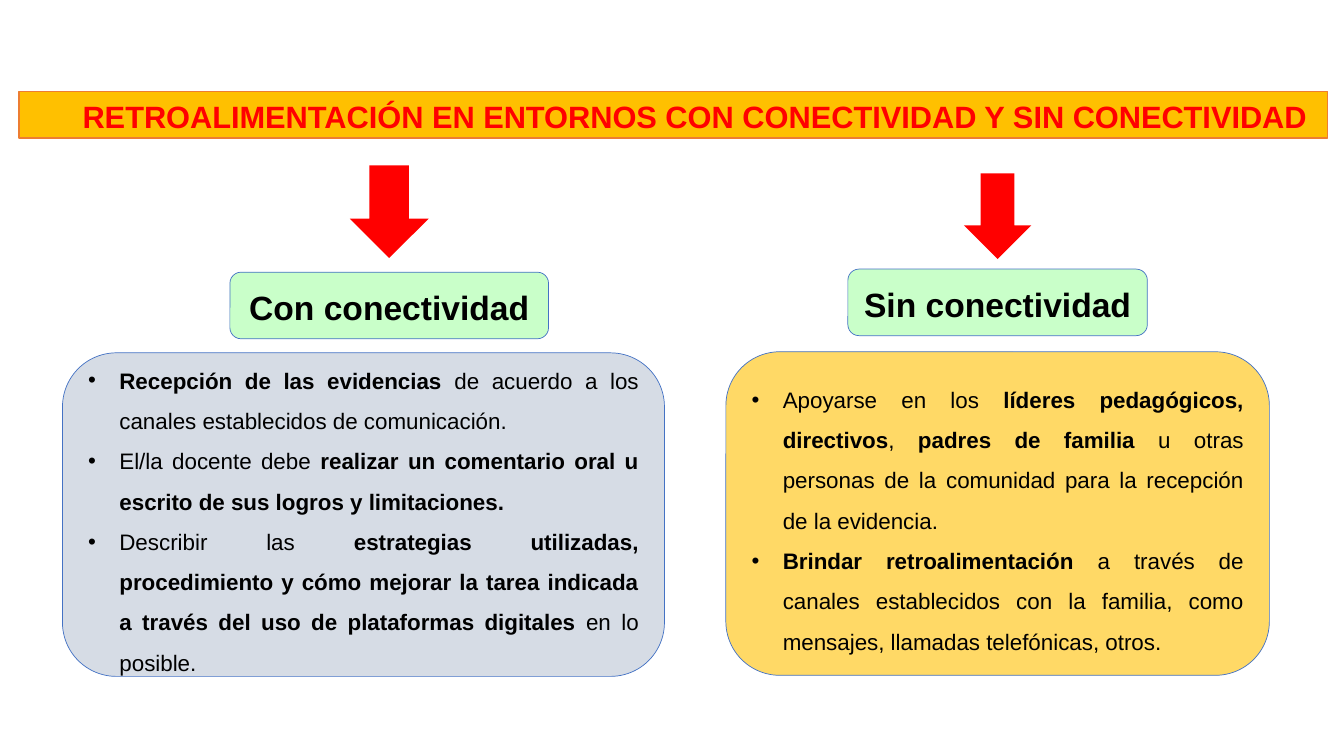
from dataclasses import dataclass

from lxml.etree import SubElement
from pptx import Presentation
from pptx.dml.color import RGBColor as Rgb
from pptx.enum.shapes import MSO_SHAPE as Preset
from pptx.enum.text import MSO_ANCHOR as Anchor, PP_ALIGN as Align
from pptx.oxml.ns import qn
from pptx.util import Inches, Pt


@dataclass(frozen=True)
class Theme:
    font: str = "Arial"
    ink: str = "000000"
    red: str = "FF0000"
    banner: str = "FFC000"
    banner_line: str = "ED7D31"
    outline: str = "4472C4"
    heading: str = "C9FFC9"
    online: str = "D6DCE5"
    offline: str = "FFD966"
    title_size: int = 22
    heading_size: int = 24
    body_size: int = 16


THEME = Theme()


@dataclass(frozen=True)
class Box:
    left: float
    top: float
    width: float
    height: float

    def area(self, left, top, width, height):
        return Box(
            self.left + self.width * left / 100,
            self.top + self.height * top / 100,
            self.width * width / 100,
            self.height * height / 100,
        )


SLIDE = Box(0, 0, 13.33, 7.5)


def add_block(slide, preset, box, fill, line=None, line_width=0.5):
    block = slide.shapes.add_shape(
        preset, Inches(box.left), Inches(box.top), Inches(box.width), Inches(box.height)
    )
    block.shadow.inherit = False
    block.fill.solid()
    block.fill.fore_color.rgb = Rgb.from_string(fill)
    if line:
        block.line.color.rgb = Rgb.from_string(line)
        block.line.width = Pt(line_width)
    else:
        block.line.fill.background()
    return block


def write(block, paragraphs, size, color=THEME.ink, align=Align.LEFT,
          anchor=Anchor.MIDDLE, margin=0.01, indent=-0.01, spacing=1.07,
          after=0.2, bullet=None):
    frame = block.text_frame
    frame.word_wrap = True
    frame.vertical_anchor = anchor
    for index, content in enumerate(paragraphs):
        paragraph = frame.add_paragraph() if index else frame.paragraphs[0]
        paragraph.alignment = align
        paragraph.line_spacing = spacing
        paragraph.space_after = Pt(after)
        properties = paragraph._p.get_or_add_pPr()
        properties.set("marL", str(Inches(margin)))
        properties.set("indent", str(Inches(indent)))
        if bullet:
            SubElement(properties, qn("a:buFont")).set("typeface", THEME.font)
            SubElement(properties, qn("a:buChar")).set("char", bullet)
        for position, words in enumerate(content.split("**")):
            if words:
                run = paragraph.add_run()
                run.text = words
                run.font.name = THEME.font
                run.font.size = Pt(size)
                run.font.bold = position % 2 == 1
                run.font.color.rgb = Rgb.from_string(color)


def add_banner(slide, box, title):
    banner = add_block(slide, Preset.RECTANGLE, box, THEME.banner, THEME.banner_line, 1)
    write(banner, [f"**{title}**"], THEME.title_size, color=THEME.red,
          anchor=Anchor.TOP, margin=0.54, spacing=1.03)


def add_column(slide, box, heading, points, fill, arrow_area, heading_area):
    add_block(slide, Preset.DOWN_ARROW, box.area(*arrow_area), THEME.red)
    label = add_block(slide, Preset.ROUNDED_RECTANGLE, box.area(*heading_area),
                      THEME.heading, THEME.outline)
    write(label, [f"**{heading}**"], THEME.heading_size, align=Align.CENTER)
    panel = add_block(slide, Preset.ROUNDED_RECTANGLE, box.area(0, 36.69, 100, 63.31),
                      fill, THEME.outline)
    write(panel, points, THEME.body_size, align=Align.JUSTIFY, margin=0.31,
          indent=-0.31, spacing=1.5, after=0, bullet="•")


def main():
    deck = Presentation()
    deck.slide_width = Inches(SLIDE.width)
    deck.slide_height = Inches(SLIDE.height)
    slide = deck.slides.add_slide(deck.slide_layouts[6])

    add_banner(slide, SLIDE.area(1.43, 12.13, 97.37, 6.13),
               "RETROALIMENTACIÓN EN ENTORNOS CON CONECTIVIDAD Y SIN CONECTIVIDAD")
    add_column(
        slide, SLIDE.area(4.65, 21.87, 44.79, 67.6), "Con conectividad",
        [
            "**Recepción de las evidencias **de acuerdo a los canales establecidos "
            "de comunicación.",
            "El/la docente debe **realizar un comentario oral u escrito de sus "
            "logros y limitaciones. **",
            "Describir las **estrategias utilizadas, procedimiento y cómo mejorar "
            "la tarea indicada a través del uso de plataformas digitales** en lo posible.",
        ],
        THEME.online,
        arrow_area=(47.74, 0, 13.07, 18.15),
        heading_area=(27.81, 20.91, 52.93, 13.02),
    )
    add_column(
        slide, SLIDE.area(54.01, 21.73, 40.44, 67.6), "Sin conectividad",
        [
            "Apoyarse en los **líderes pedagógicos, directivos**, **padres de "
            "familia** u otras personas de la comunidad para la recepción de la evidencia.",
            "**Brindar retroalimentación **a través de canales establecidos con la "
            "familia, como mensajes, llamadas telefónicas, otros.",
        ],
        THEME.offline,
        arrow_area=(43.78, 1.78, 12.43, 16.77),
        heading_area=(22.45, 20.51, 55.1, 13.02),
    )
    deck.save("out.pptx")


if __name__ == "__main__":
    main()
